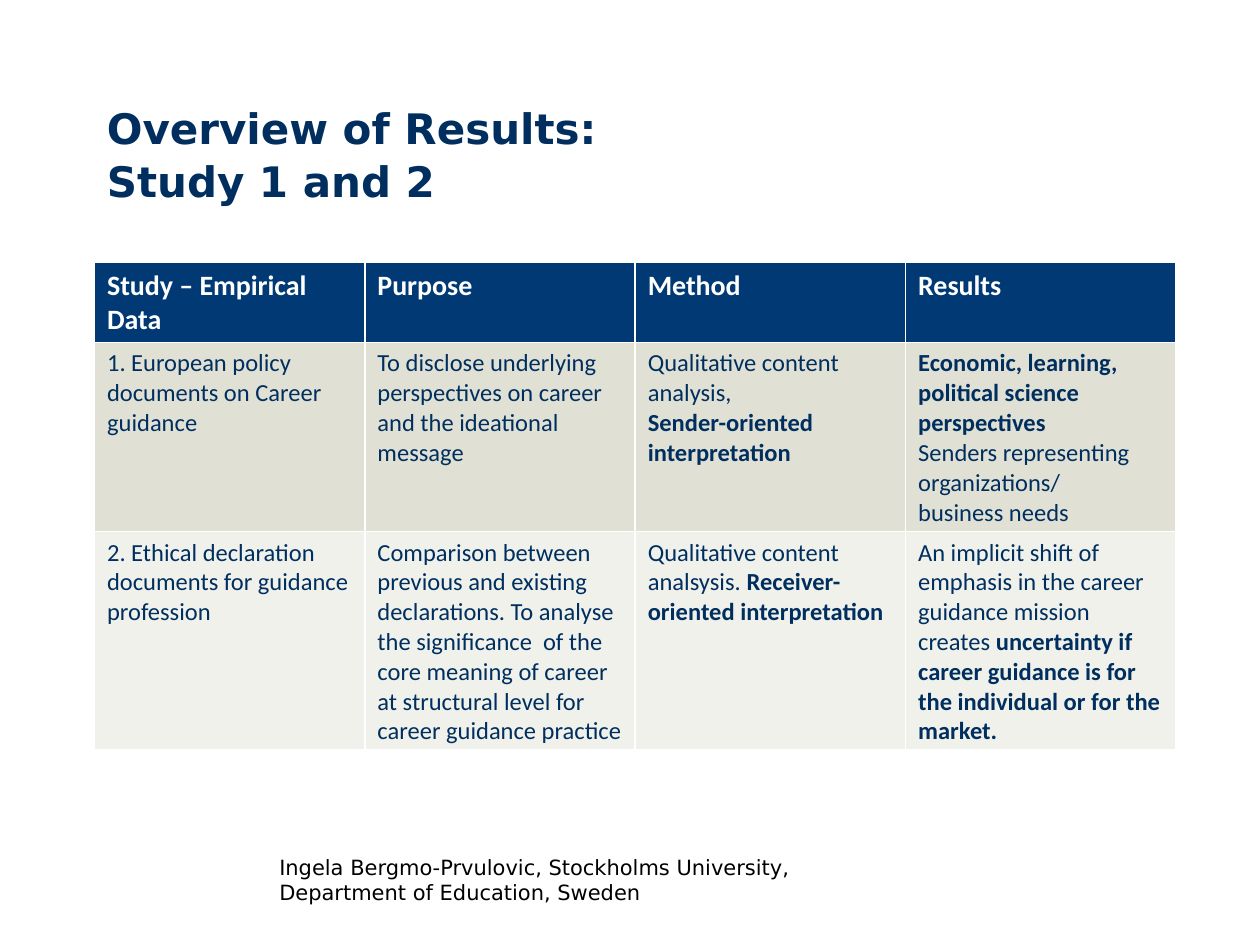
from dataclasses import dataclass

from pptx import Presentation
from pptx.dml.color import RGBColor as Rgb
from pptx.enum.text import MSO_ANCHOR as Anchor
from pptx.util import Pt

INK = {
    "navy": "002F5F",
    "head": "003974",
    "sand": "E0E1D4",
    "pale": "F0F1EB",
    "white": "FFFFFF",
    "black": "000000",
}
SANS, BODY = "DejaVu Sans", "Calibri"


@dataclass(frozen=True)
class Run:
    text: str
    bold: bool = False


@dataclass(frozen=True)
class Style:
    font: str
    size: float
    ink: str
    bold: bool = False


@dataclass(frozen=True)
class Band:
    """A table row: its fill, its text style, and paragraphs of runs per cell."""
    fill: str
    style: Style
    cells: list[list[list[Run]]]


HEAD = Style(BODY, 16, "white", True)
CELL = Style(BODY, 14, "navy")

BANDS = [
    Band("head", HEAD, [
        [[Run(name, True)]]
        for name in ("Study – Empirical Data", "Purpose", "Method", "Results")
    ]),
    Band("sand", CELL, [
        [[Run("1. European policy documents on Career guidance")]],
        [[Run("To disclose underlying perspectives on career and the "
              "ideational message")]],
        [[Run("Qualitative content analysis,")],
         [Run("Sender-oriented interpretation", True)]],
        [[Run("Economic, learning, political science perspectives \n", True),
          Run("Senders representing organizations/")],
         [Run("business needs")]],
    ]),
    Band("pale", CELL, [
        [[Run("2. Ethical declaration documents for guidance profession")]],
        [[Run("Comparison between previous and existing declarations. To "
              "analyse the significance  of the core meaning of career at "
              "structural level for career guidance practice")]],
        [[Run("Qualitative content analsysis. "),
          Run("Receiver-oriented interpretation", True)]],
        [[Run("An implicit shift of emphasis in the career guidance mission "
              "creates "),
          Run("uncertainty if career guidance is for the individual or for "
              "the market.", True)]],
    ]),
]


def write(frame, paras: list[list[Run]], style: Style) -> None:
    """Fill a text frame; a newline in a run becomes a line break."""
    for i, runs in enumerate(paras):
        para = frame.add_paragraph() if i else frame.paragraphs[0]
        font = para.font
        font.name, font.size = style.font, Pt(style.size)
        font.color.rgb = Rgb.from_string(INK[style.ink])
        weights = {run.bold for run in runs}
        if len(weights) == 1:
            font.bold = runs[0].bold
        for run in runs:
            for j, line in enumerate(run.text.split("\n")):
                if j:
                    para.add_line_break()
                if line:
                    part = para.add_run()
                    part.text = line
                    if len(weights) > 1:
                        part.font.bold = run.bold


def label(slide, box: tuple, text: str, style: Style, gap: float = 1.0) -> None:
    frame = slide.shapes.add_textbox(*map(Pt, box)).text_frame
    frame.word_wrap = True
    frame.vertical_anchor = Anchor.TOP
    write(frame, [[Run(text, style.bold)]], style)
    frame.paragraphs[0].line_spacing = gap


def grid(slide, box: tuple, bands: list[Band]) -> None:
    """Draw the table; the default table style gives its white rules."""
    cols = len(bands[0].cells)
    table = slide.shapes.add_table(len(bands), cols, *map(Pt, box)).table
    for row, band in zip(table.rows, bands):
        for cell, paras in zip(row.cells, band.cells):
            cell.fill.solid()
            cell.fill.fore_color.rgb = Rgb.from_string(INK[band.fill])
            write(cell.text_frame, paras, band.style)


def main() -> None:
    deck = Presentation()
    deck.slide_width, deck.slide_height = Pt(720), Pt(540)
    slide = deck.slides.add_slide(deck.slide_layouts[6])
    label(slide, (54, 54, 618, 72), "Overview of Results: \nStudy 1 and 2",
          Style(SANS, 24, "navy", True), 1.04)
    label(slide, (152.5, 484.5, 353.5, 41),
          "Ingela Bergmo-Prvulovic, Stockholms University, "
          "Department of Education, Sweden", Style(SANS, 12, "black"))
    grid(slide, (54, 150, 618, 88.5), BANDS)
    deck.save("out.pptx")


if __name__ == "__main__":
    main()
